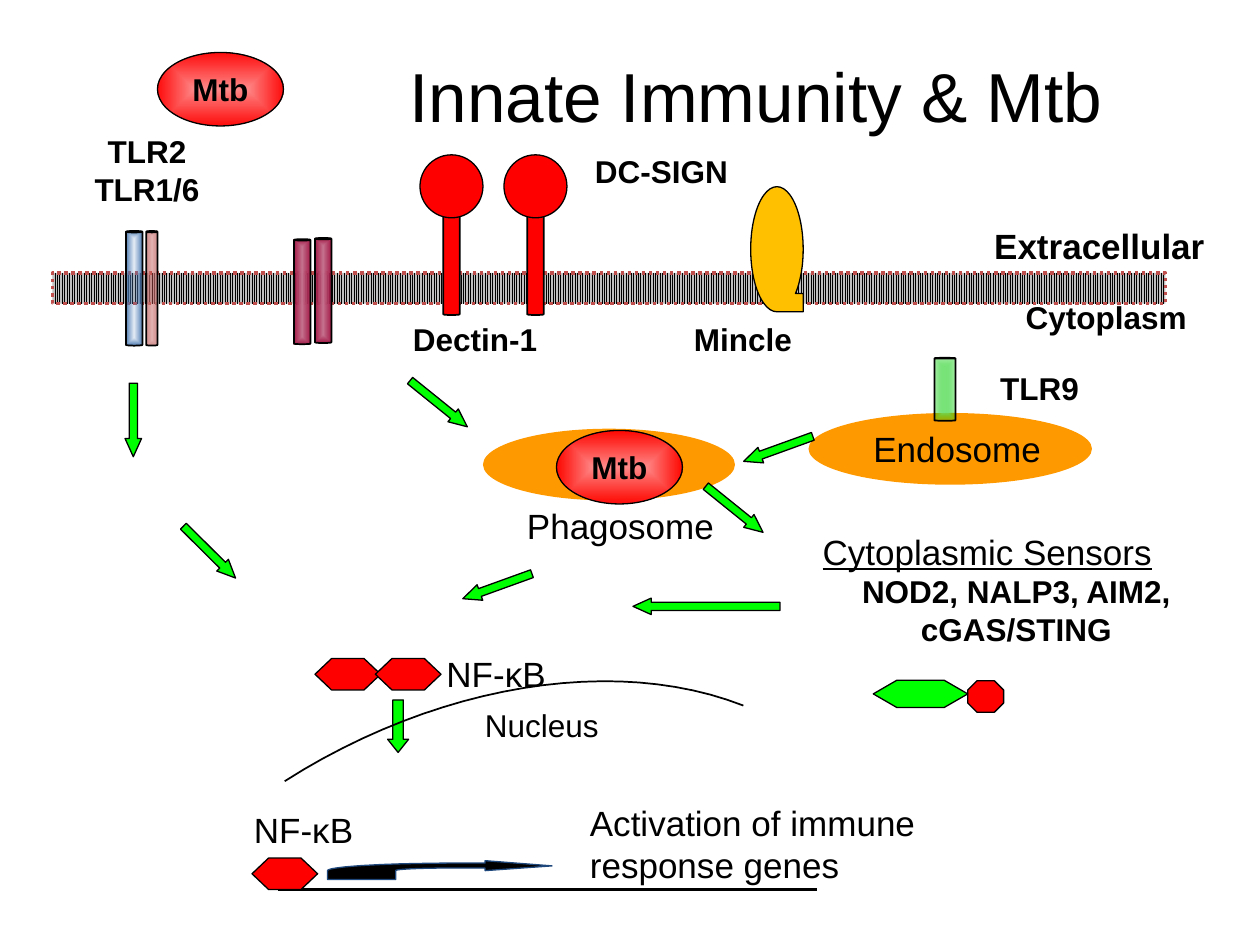
from dataclasses import dataclass

from lxml.etree import SubElement
from pptx import Presentation
from pptx.dml.color import RGBColor
from pptx.enum.dml import MSO_LINE, MSO_PATTERN
from pptx.enum.shapes import MSO_CONNECTOR, MSO_SHAPE as Preset
from pptx.enum.text import MSO_ANCHOR, MSO_AUTO_SIZE, PP_ALIGN as Align
from pptx.oxml import parse_xml
from pptx.oxml.ns import nsdecls, qn
from pptx.util import Pt


@dataclass(frozen=True)
class Theme:
    font: str = "Arial"
    title: float = 39.6
    large: float = 20
    normal: float = 18
    thin: float = 0.75
    medium: float = 1
    thick: float = 1.5
    ink: str = "000000"
    membrane: str = "C0C0C0"
    membrane_edge: str = "C0504D"
    signal: str = "00FF00"
    red: str = "FF0000"
    vesicle: str = "FF9900"
    mincle: str = "FFC000"
    gene_edge: str = "1F497D"
    bacterium: tuple = ("shape", ("FF8B8B", 100), ("FF0000", 95))
    tlr1: tuple = ("rect", ("C0504D", 42), ("D49C9C", 100))
    tlr2: tuple = ("rect", ("4F81BD", 15), ("4774AA", 100))
    tlr9: tuple = ("rect", ("7CE57C", 100), ("00CC00", 30))
    receptor: tuple = ("rect", ("C77490", 100), ("990033", 90))


THEME = Theme()


def rgb(code):
    return RGBColor.from_string(code)


def fill_gradient(shape, shade, start, end):
    stops = "".join(
        f'<a:gs pos="{position}"><a:srgbClr val="{color}">'
        f'<a:alpha val="{opacity * 1000}"/></a:srgbClr></a:gs>'
        for position, (color, opacity) in ((0, start), (100000, end)))
    gradient = parse_xml(
        f'<a:gradFill {nsdecls("a")} rotWithShape="1"><a:gsLst>{stops}</a:gsLst>'
        f'<a:path path="{shade}"><a:fillToRect l="50000" t="50000" r="50000" '
        'b="50000"/></a:path></a:gradFill>')
    shape.fill.background()
    blank = shape._element.spPr.find(qn("a:noFill"))
    blank.getparent().replace(blank, gradient)


def paint(shape, fill, edge=THEME.ink, weight=THEME.thin):
    shape.shadow.inherit = False
    if fill is None:
        shape.fill.background()
    elif isinstance(fill, tuple):
        fill_gradient(shape, *fill)
    else:
        shape.fill.solid()
        shape.fill.fore_color.rgb = rgb(fill)
    if edge is None:
        shape.line.fill.background()
    else:
        shape.line.color.rgb = rgb(edge)
        shape.line.width = Pt(weight)
    return shape


def add_preset(page, kind, place, fill, adjust=(), **outline):
    shape = page.shapes.add_shape(kind, *map(Pt, place))
    for index, value in enumerate(adjust):
        shape.adjustments[index] = value
    return paint(shape, fill, **outline)


def write(shape, text, size, bold=False, align=Align.LEFT, underline=None):
    frame = shape.text_frame
    frame.text = text
    for para in frame.paragraphs:
        para.alignment = align
        font = para.font
        font.name, font.size = THEME.font, Pt(size)
        font.bold, font.underline = bold, underline
        font.color.rgb = rgb(THEME.ink)
    return frame


def add_label(page, place, text, size=THEME.large, **style):
    box = page.shapes.add_textbox(*map(Pt, place))
    frame = write(box, text, size, **style)
    frame.word_wrap = True
    frame.auto_size = MSO_AUTO_SIZE.SHAPE_TO_FIT_TEXT
    return frame


def add_name(page, place, text):
    add_label(page, place, text, THEME.normal, bold=True, align=Align.CENTER)


def add_title(page):
    frame = add_label(page, (162, 30, 540, 48), "Innate Immunity & Mtb",
                      THEME.title, align=Align.CENTER)
    frame.auto_size = MSO_AUTO_SIZE.NONE
    frame.vertical_anchor = MSO_ANCHOR.MIDDLE


def add_membrane(page):
    band = add_preset(page, Preset.RECTANGLE, (30, 156, 636, 17.5), THEME.membrane,
                      edge=THEME.membrane_edge, weight=2)
    band.fill.patterned()
    band.fill.pattern = MSO_PATTERN.LIGHT_VERTICAL
    band.fill.fore_color.rgb = rgb(THEME.ink)
    band.fill.back_color.rgb = rgb(THEME.membrane)
    band.line.dash_style = MSO_LINE.ROUND_DOT


def add_can(page, place, fill, bulge=0.08):
    add_preset(page, Preset.CAN, place, fill, (bulge,), weight=THEME.medium)


def add_signal(page, left, top, angle=0, length=42):
    arrow = add_preset(page, Preset.DOWN_ARROW, (left, top, 9.4, length),
                       THEME.signal, (0.5, 1.105))
    arrow.rotation = angle


def add_subunit(page, left, top):
    add_preset(page, Preset.HEXAGON, (left, top, 37.5, 18), THEME.red, (0.526,))


def add_vesicle(page, place):
    add_preset(page, Preset.OVAL, place, THEME.vesicle, edge=None)


def add_bacterium(page, left, top):
    cell = add_preset(page, Preset.OVAL, (left, top, 72, 42), THEME.bacterium)
    frame = write(cell, "Mtb", THEME.normal, bold=True, align=Align.CENTER)
    frame.word_wrap = False
    frame.vertical_anchor = MSO_ANCHOR.MIDDLE


def curve(start, first, second, end, steps=24):
    def blend(t, a, b, c, d):
        s = 1 - t
        return s**3 * a + 3 * s * s * t * b + 3 * s * t * t * c + t**3 * d
    return [tuple(blend(step / steps, *axis) for axis in zip(start, first, second, end))
            for step in range(steps + 1)]


def add_outline(page, points, close, fill, edge, weight):
    scale = 100
    (x, y), *rest = [(round(x * scale), round(y * scale)) for x, y in points]
    builder = page.shapes.build_freeform(x, y, scale=Pt(1) / scale)
    builder.add_line_segments(rest, close=close)
    paint(builder.convert_to_shape(), fill, edge, weight)


def add_nucleus(page):
    rim = curve((424.8, 403.2), (351.4, 374.4), (249.8, 391), (162.7, 446.4))
    add_outline(page, rim, False, None, THEME.ink, THEME.medium)
    add_label(page, (270, 400, 98, 29), "Nucleus", THEME.normal)


def add_gene(page):
    strand = page.shapes.add_connector(MSO_CONNECTOR.STRAIGHT,
                                       Pt(159), Pt(508.3), Pt(467), Pt(508.3))
    strand.line.color.rgb = rgb(THEME.ink)
    strand.line.width = Pt(THEME.thick)
    SubElement(strand._element.spPr, qn("a:effectLst"))
    outer = curve((260.6, 493.2), (220.3, 493.2), (187.2, 495.2), (187.2, 497.5))
    inner = curve((226.1, 497.5), (226.1, 496.6), (241.2, 496), (260.6, 496))
    points = [(315.4, 494.8), (277.2, 491.8), (277.2, 493.2), *outer,
              (187.2, 502.6), (226.1, 502.6), *inner, (277.2, 496), (277.2, 497.5)]
    add_outline(page, points, True, THEME.ink, THEME.gene_edge, THEME.thin)
    add_label(page, (330, 454.5, 210, 55), "Activation of immune response genes")
    add_label(page, (138, 458.5, 90, 31), "NF-κB")
    add_subunit(page, 144, 490.3)


def add_receptors(page):
    add_can(page, (83.5, 132, 6.5, 65.5), THEME.tlr1, 0.125)
    add_can(page, (72, 132, 9.4, 65.5), THEME.tlr2, 0.09)
    add_name(page, (24, 72, 120, 51), "TLR2\nTLR1/6")
    add_can(page, (180, 136, 9.4, 60), THEME.receptor)
    add_can(page, (168, 136.7, 9.4, 60), THEME.receptor)
    for left in (240, 288):
        add_can(page, (left + 13.3, 120, 9.4, 60), THEME.red)
        add_preset(page, Preset.FLOWCHART_CONNECTOR, (left, 88.5, 36, 36), THEME.red)
    add_preset(page, Preset.FLOWCHART_SEQUENTIAL_ACCESS_STORAGE,
               (429, 106.7, 30, 71.5), THEME.mincle)
    add_name(page, (376.5, 179.5, 96, 29), "Mincle")
    add_name(page, (205, 179.5, 133, 29), "Dectin-1")
    add_name(page, (306, 83.5, 144, 29), "DC-SIGN")


def add_compartments(page):
    add_label(page, (561, 124.5, 162, 31.5), "Extracellular", bold=True)
    add_label(page, (579, 167, 150.5, 29), "Cytoplasm", THEME.normal, bold=True)
    add_vesicle(page, (462, 236, 162, 41))
    add_name(page, (546, 207.5, 96, 29), "TLR9")
    add_label(page, (492, 240.5, 116, 31), "Endosome")
    add_can(page, (534, 204.5, 12, 36), THEME.tlr9, 0.04)
    add_vesicle(page, (276, 245, 144, 41))
    add_label(page, (294, 284.5, 126, 31), "Phagosome")
    add_bacterium(page, 318, 246)


def add_sensors(page):
    add_label(page, (463, 299.5, 210, 31.5), "Cytoplasmic Sensors", underline=True)
    add_name(page, (464.5, 323.3, 232.5, 51), "NOD2, NALP3, AIM2, cGAS/STING")
    add_preset(page, Preset.OCTAGON, (553, 389, 20.5, 18), THEME.red, (0.293,))
    add_preset(page, Preset.HEXAGON, (499, 388.7, 54, 15.7), THEME.signal, (0.864,))


def main():
    deck = Presentation()
    deck.slide_width, deck.slide_height = Pt(720), Pt(540)
    page = deck.slides.add_slide(deck.slide_layouts[6])
    add_membrane(page)
    add_title(page)
    add_preset(page, Preset.DOWN_ARROW, (221.5, 400, 12, 30), THEME.signal, (0.5, 0.625))
    add_gene(page)
    add_nucleus(page)
    for left in (180, 214.5):
        add_subunit(page, left, 376.3)
    add_label(page, (248, 369.5, 90, 31), "NF-κB")
    add_bacterium(page, 90, 30)
    add_receptors(page)
    add_compartments(page)
    add_sensors(page)
    for left, top, angle in ((71.5, 219, 0), (115, 294.5, 314.8), (246, 209.7, 308.9),
                             (279.5, 314, 70.1), (440, 235.5, 70.1), (415, 270, 308.9)):
        add_signal(page, left, top, angle)
    add_signal(page, 399, 304.5, 90, 84)
    deck.save("out.pptx")


if __name__ == "__main__":
    main()
